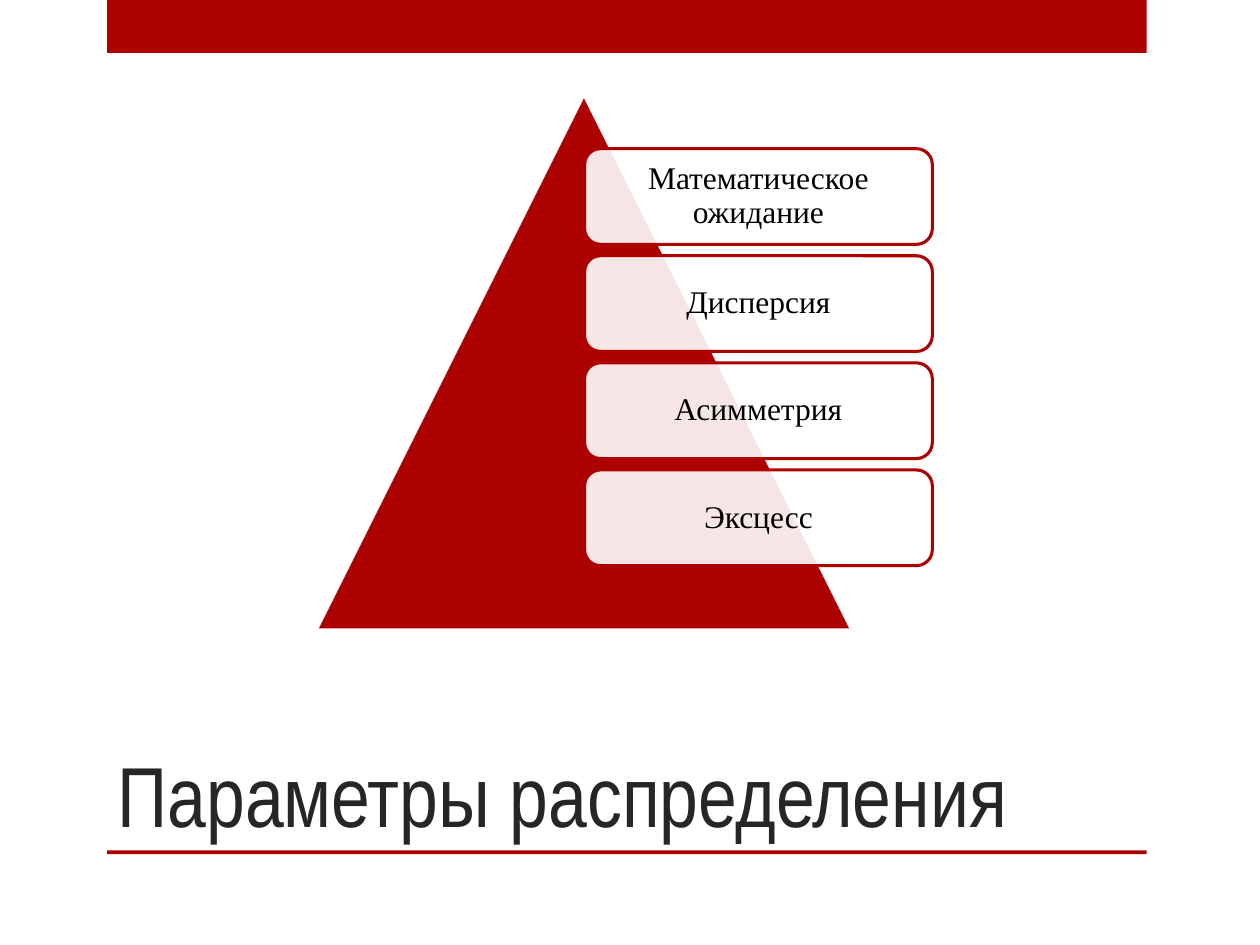
"""Build a slide listing distribution parameters on a pyramid."""
from lxml import etree
from pptx import Presentation
from pptx.dml.color import RGBColor
from pptx.enum.shapes import MSO_SHAPE
from pptx.enum.text import MSO_ANCHOR, MSO_AUTO_SIZE, PP_ALIGN
from pptx.oxml.ns import qn
from pptx.util import Inches, Pt

RECT = MSO_SHAPE.RECTANGLE
TRIANGLE = MSO_SHAPE.ISOSCELES_TRIANGLE
ROUNDED = MSO_SHAPE.ROUNDED_RECTANGLE
MIDDLE, BOTTOM = MSO_ANCHOR.MIDDLE, MSO_ANCHOR.BOTTOM
LEFT, CENTER = PP_ALIGN.LEFT, PP_ALIGN.CENTER
NO_AUTOFIT = MSO_AUTO_SIZE.NONE

RED = RGBColor(0xAD, 0x01, 0x01)
WHITE = RGBColor(0xFF, 0xFF, 0xFF)
BLACK = RGBColor(0x00, 0x00, 0x00)
DARK = RGBColor(0x26, 0x26, 0x26)

PARAMETERS = ["Математическое ожидание", "Дисперсия", "Асимметрия", "Эксцесс"]
CARD_TOP, CARD_STEP = 1.18, 0.85


def add_shape(shapes, kind, box, fill, line=None):
    sp = shapes.add_shape(kind, *[Inches(v) for v in box])
    sp.shadow.inherit = False
    sp.fill.solid()
    sp.fill.fore_color.rgb = fill
    if line is None:
        sp.line.fill.background()
    else:
        sp.line.color.rgb = line
        sp.line.width = Pt(1.75)
    return sp


def add_run(p, text, font, size, color):
    r = p.add_run()
    r.text = text
    r.font.name = font
    r.font.size = Pt(size)
    r.font.color.rgb = color


prs = Presentation()
prs.slide_width, prs.slide_height = Inches(10), Inches(7.5)
s = prs.slides.add_slide(prs.slide_layouts[5])

for top, height in [(0, 0.42), (6.75, 0.03)]:
    add_shape(s.shapes, RECT, (0.85, top, 8.25, height), RED)

title = s.shapes.title
title.left, title.top = Inches(0.83), Inches(5)
title.width, title.height = Inches(7.42), Inches(1.75)
tf = title.text_frame
tf.auto_size = NO_AUTOFIT
tf.vertical_anchor = BOTTOM
p = tf.paragraphs[0]
p.alignment = LEFT
add_run(p, "Параметры распределения", "Arial Narrow", 48.6, DARK)

pyramid = s.shapes.add_group_shape()
add_shape(pyramid.shapes, TRIANGLE, (2.51, 0.75, 4.25, 4.25), RED, WHITE)

for i, name in enumerate(PARAMETERS):
    box = (4.64, CARD_TOP + i * CARD_STEP, 2.76, 0.76)
    sp = add_shape(pyramid.shapes, ROUNDED, box, WHITE, RED)
    color = sp.fill._xPr.find(qn("a:solidFill"))[0]
    etree.SubElement(color, qn("a:alpha"), val="90000")
    tf = sp.text_frame
    tf.word_wrap = True
    tf.vertical_anchor = MIDDLE
    tf.margin_left = tf.margin_right = Inches(0.07)
    tf.margin_top = tf.margin_bottom = Inches(0.07)
    p = tf.paragraphs[0]
    p.alignment = CENTER
    p.line_spacing = 0.9
    add_run(p, name, "Times New Roman", 18, BLACK)

prs.save("out.pptx")
